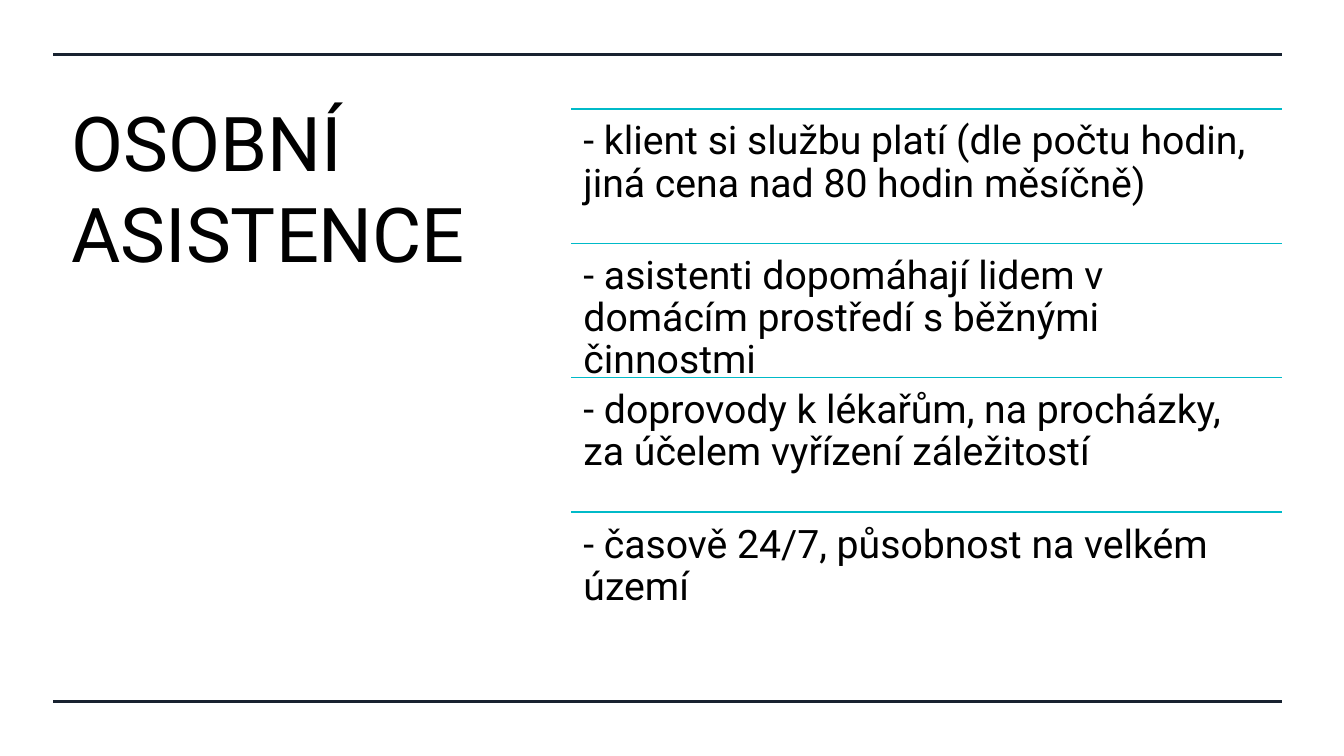
import pptx
import pptx.dml.color
import pptx.enum.shapes
import pptx.enum.text
import pptx.oxml.ns
import pptx.util
from lxml import etree

Pt = pptx.util.Pt
ANCHOR = pptx.enum.text.MSO_ANCHOR

FONT = "Roboto"
BLACK = "000000"
NAVY = "182230"
TEAL = "00BAC8"

MARGIN_LEFT = 38.2
MARGIN_RIGHT = 915.8
LIST_LEFT = 408.2
LIST_TOP = 77.8
ROW_HEIGHT = 96

TITLE = "OSOBNÍ ASISTENCE"
SERVICE_FACTS = [
    "- klient si službu platí (dle počtu hodin, jiná cena nad 80 hodin měsíčně)",
    "- asistenti dopomáhají lidem v domácím prostředí s běžnými činnostmi",
    "- doprovody k lékařům, na procházky, za účelem vyřízení záležitostí",
    "- časově 24/7, působnost na velkém území",
]


def color(hex_code):
    return pptx.dml.color.RGBColor.from_string(hex_code)


def add_rule(slide, left, top, hex_code, weight):
    """Draw a horizontal line from left to the right margin."""
    rule = slide.shapes.add_connector(
        pptx.enum.shapes.MSO_CONNECTOR.STRAIGHT,
        Pt(left), Pt(top), Pt(MARGIN_RIGHT), Pt(top))
    rule.line.color.rgb = color(hex_code)
    rule.line.width = Pt(weight)
    properties = rule._element.spPr
    etree.SubElement(properties, pptx.oxml.ns.qn("a:effectLst"))


def add_text(slide, left, top, width, height, text, size,
             anchor=ANCHOR.TOP, line_spacing=1.0, inset_x=7.2, inset_y=3.6):
    box = slide.shapes.add_textbox(Pt(left), Pt(top), Pt(width), Pt(height))
    frame = box.text_frame
    frame.word_wrap = True
    frame.vertical_anchor = anchor
    frame.margin_left = frame.margin_right = Pt(inset_x)
    frame.margin_top = frame.margin_bottom = Pt(inset_y)
    para = frame.paragraphs[0]
    para.line_spacing = line_spacing
    span = para.add_run()
    span.text = text
    span.font.name = FONT
    span.font.size = Pt(size)
    span.font.color.rgb = color(BLACK)


def add_fact_list(slide, facts):
    for row, fact in enumerate(facts):
        top = LIST_TOP + row * ROW_HEIGHT
        add_rule(slide, LIST_LEFT, top, TEAL, 1)
        add_text(slide, LIST_LEFT, top, MARGIN_RIGHT - LIST_LEFT, ROW_HEIGHT,
                 fact, 28, line_spacing=0.9, inset_x=8.6, inset_y=8.6)


def main():
    deck = pptx.Presentation()
    deck.slide_width = Pt(960)
    deck.slide_height = Pt(540)
    slide = deck.slides.add_slide(deck.slide_layouts[6])
    for top in (38.7, 501.3):
        add_rule(slide, MARGIN_LEFT, top, NAVY, 2.25)
    add_text(slide, 44, 58.3, 337.7, 143.3, TITLE, 54, anchor=ANCHOR.BOTTOM)
    add_fact_list(slide, SERVICE_FACTS)
    deck.save("out.pptx")


if __name__ == "__main__":
    main()
